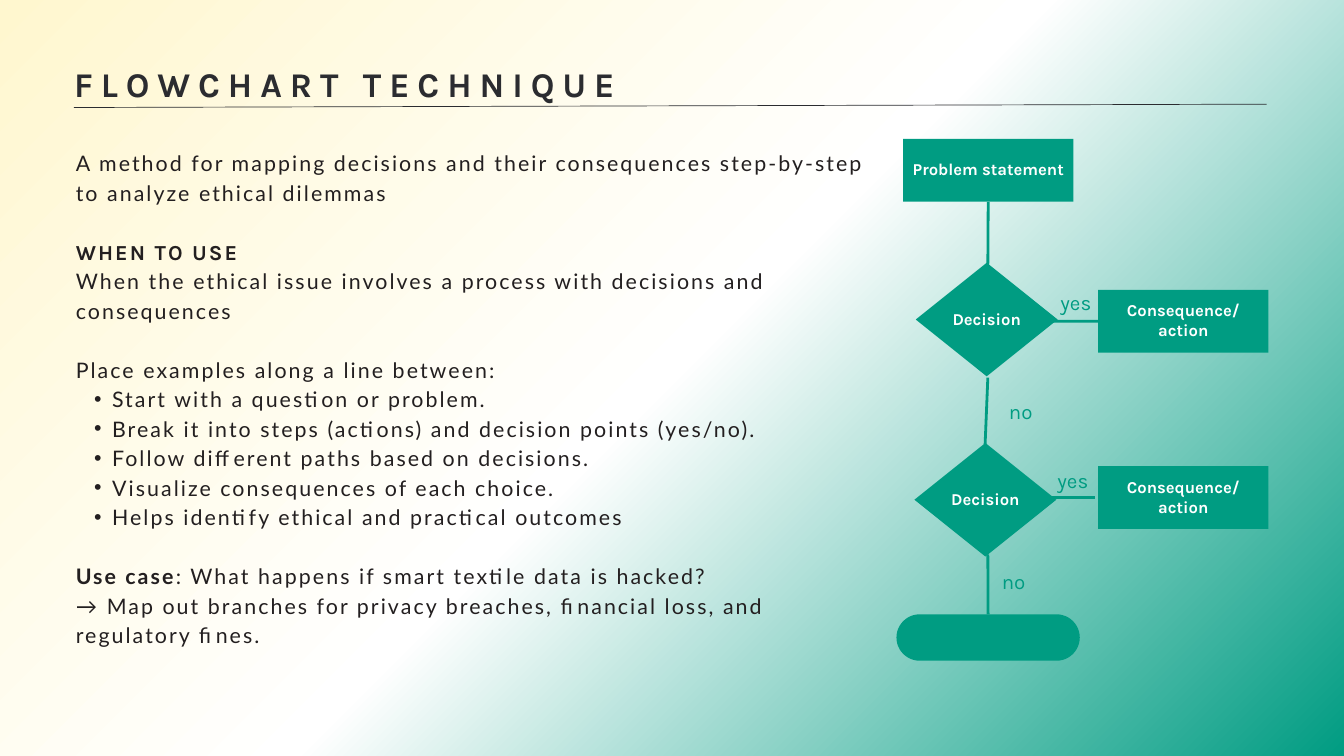
from copy import deepcopy

from lxml import etree
from pptx import Presentation
from pptx.dml.color import RGBColor
from pptx.enum import shapes, text
from pptx.oxml import ns
from pptx.util import Pt

GREEN, INK, WHITE = "009C82", "231F20", "FFFFFF"
SHAPE, ALIGN, ANCHOR = shapes.MSO_SHAPE, text.PP_ALIGN, text.MSO_ANCHOR


def color(hex_code):
    return RGBColor.from_string(hex_code)


def write(paragraph, content, font, fill, line, spacing=0, align=ALIGN.LEFT):
    """Add a run; font holds run format values, line and spacing are in points."""
    paragraph.alignment = align
    paragraph.line_spacing = Pt(line)
    run = paragraph.add_run()
    run.text = content
    for name, value in font.items():
        setattr(run.font, name, value)
    run.font.color.rgb = color(fill)
    if spacing:
        run.font._element.set("spc", str(round(spacing * 100)))


presentation = Presentation()
presentation.slide_width, presentation.slide_height = Pt(1440), Pt(810)
slide = presentation.slides.add_slide(presentation.slide_layouts[1])

# Diagonal background
background = slide.background.fill
background.gradient()
background.gradient_angle = 315
stops = slide._element.find(".//" + ns.qn("a:gsLst"))
stops.insert(1, deepcopy(stops[0]))
for stop, position, shade in zip(background.gradient_stops, (0, 0.5, 1), ("FFF7CF", WHITE, GREEN)):
    stop.position = position
    stop.color.rgb = color(shade)

# Title and body placeholders
title, body = slide.placeholders
for placeholder, box in ((title, (79.4, 59.5, 1278, 51)), (body, (81.2, 156.8, 858.2, 597.6))):
    placeholder.left, placeholder.top, placeholder.width, placeholder.height = map(Pt, box)
    frame_format = dict(margin_left=0, margin_top=0, margin_right=0, margin_bottom=0,
                        word_wrap=True, vertical_anchor=ANCHOR.TOP,
                        auto_size=text.MSO_AUTO_SIZE.NONE)
    for name, value in frame_format.items():
        setattr(placeholder.text_frame, name, value)

write(title.text_frame.paragraphs[0], "FLOWCHART TECHNIQUE",
      dict(name="Karla", size=Pt(37.1), bold=True), "2B2C30", 52, 8.5)

plain = dict(name="Lato", size=Pt(22.9), bold=False)
strong = plain | dict(bold=True)
heading = strong | dict(name="Karla")
LINE = 31.6
# Runs, space before, bulleted
paragraphs = [
    ([("A method for mapping decisions and their consequences step-by-step "
       "to analyze ethical dilemmas", plain)], 0, False),
    ([("WHEN TO USE", heading)], LINE, False),
    ([("When the ethical issue involves a process with decisions and consequences", plain)], 0, False),
    ([("Place examples along a line between:", plain)], LINE, False),
    *[([(step, plain)], 0, True) for step in (
        "Start with a question or problem.",
        "Break it into steps (actions) and decision points (yes/no).",
        "Follow different paths based on decisions.",
        "Visualize consequences of each choice.",
        "Helps identify ethical and practical outcomes")],
    ([("Use case", strong), (": What happens if smart textile data is hacked?", plain)], LINE, False),
    ([("→ Map out branches for privacy breaches, financial loss, and regulatory fines.", plain)], 0, False),
]
for index, (runs, gap, bulleted) in enumerate(paragraphs):
    paragraph = body.text_frame.add_paragraph() if index else body.text_frame.paragraphs[0]
    for content, font in runs:
        write(paragraph, content, font, INK, LINE, 2.22)
    paragraph.space_before = Pt(gap)
    properties = paragraph._p.get_or_add_pPr()
    properties.set("marL", str(Pt(38.9 if bulleted else 0)))
    properties.set("indent", str(Pt(-19.4 if bulleted else 0)))
    if bulleted:
        etree.SubElement(properties, ns.qn("a:buFont"), typeface="Arial")
        etree.SubElement(properties, ns.qn("a:buChar"), char="•")
    else:
        etree.SubElement(properties, ns.qn("a:buNone"))

# Flowchart nodes
box_size, diamond_size = (182.4, 67.3), (152, 121.7)
nodes = {}
for key, kind, left, top, size, label in (
        ("problem", SHAPE.RECTANGLE, 967.6, 148.9, box_size, "Problem statement"),
        ("action 1", SHAPE.RECTANGLE, 1176.6, 310.5, box_size, "Consequence/ action"),
        ("action 2", SHAPE.RECTANGLE, 1176.6, 499.5, box_size, "Consequence/ action"),
        ("decision 1", SHAPE.DIAMOND, 981.2, 281.5, diamond_size, "Decision"),
        ("decision 2", SHAPE.DIAMOND, 979.8, 474.6, diamond_size, "Decision"),
        ("end", SHAPE.ROUNDED_RECTANGLE, 960.5, 658.2, (196.4, 49.7), "")):
    shape = slide.shapes.add_shape(kind, *map(Pt, (left, top, *size)))
    shape.shadow.inherit = False
    shape.fill.solid()
    shape.fill.fore_color.rgb = color(GREEN)
    shape.line.fill.background()
    nodes[key] = shape
    if kind == SHAPE.ROUNDED_RECTANGLE:
        shape.adjustments[0] = 0.5
    if label:
        frame = shape.text_frame
        frame.word_wrap = kind == SHAPE.RECTANGLE
        frame.vertical_anchor = ANCHOR.MIDDLE
        frame.margin_left = frame.margin_right = frame.margin_top = Pt(4)
        frame.margin_bottom = Pt(6.5)
        write(frame.paragraphs[0], label, dict(name="Karla", size=Pt(17.8), bold=True),
              WHITE, 21.7, align=ALIGN.CENTER)

# Title rule and flowchart links; a link may end on a node's side
for start, end, shade, width, node, side in (
        ((79.2, 115.2), (1357.2, 111.6), "2B2C30", 0.75, None, None),
        ((1058.4, 283.7), (1058.4, 216), GREEN, 3, "problem", 2),
        ((1128.2, 344.2), (1176.6, 344.2), GREEN, 3, "action 1", 1),
        ((1119.6, 533.2), (1172.9, 533.2), GREEN, 3, None, None),
        ((1055.5, 475.9), (1058.4, 404.6), GREEN, 3, None, None),
        ((1058.4, 594), (1058.4, 658.2), GREEN, 3, "end", 0)):
    connector = slide.shapes.add_connector(shapes.MSO_CONNECTOR.STRAIGHT, *map(Pt, start + end))
    connector.line.color.rgb = color(shade)
    connector.line.width = Pt(width)
    etree.SubElement(connector._element.spPr, ns.qn("a:effectLst"))
    if node:
        connector.end_connect(nodes[node], side)

# Branch labels
for answer, left, top, width in (("yes", 1129, 306, 47.5), ("yes", 1122.5, 496.8, 54),
                                 ("no", 1073.5, 423.4, 40.3), ("no", 1058.4, 605.5, 55.4)):
    frame = slide.shapes.add_textbox(*map(Pt, (left, top, width, 28))).text_frame
    frame.word_wrap = True
    frame.margin_left = frame.margin_right = frame.margin_top = frame.margin_bottom = 0
    write(frame.paragraphs[0], answer, dict(name="Karla", size=Pt(22)), GREEN, 30.8,
          align=ALIGN.CENTER)

presentation.save("out.pptx")
